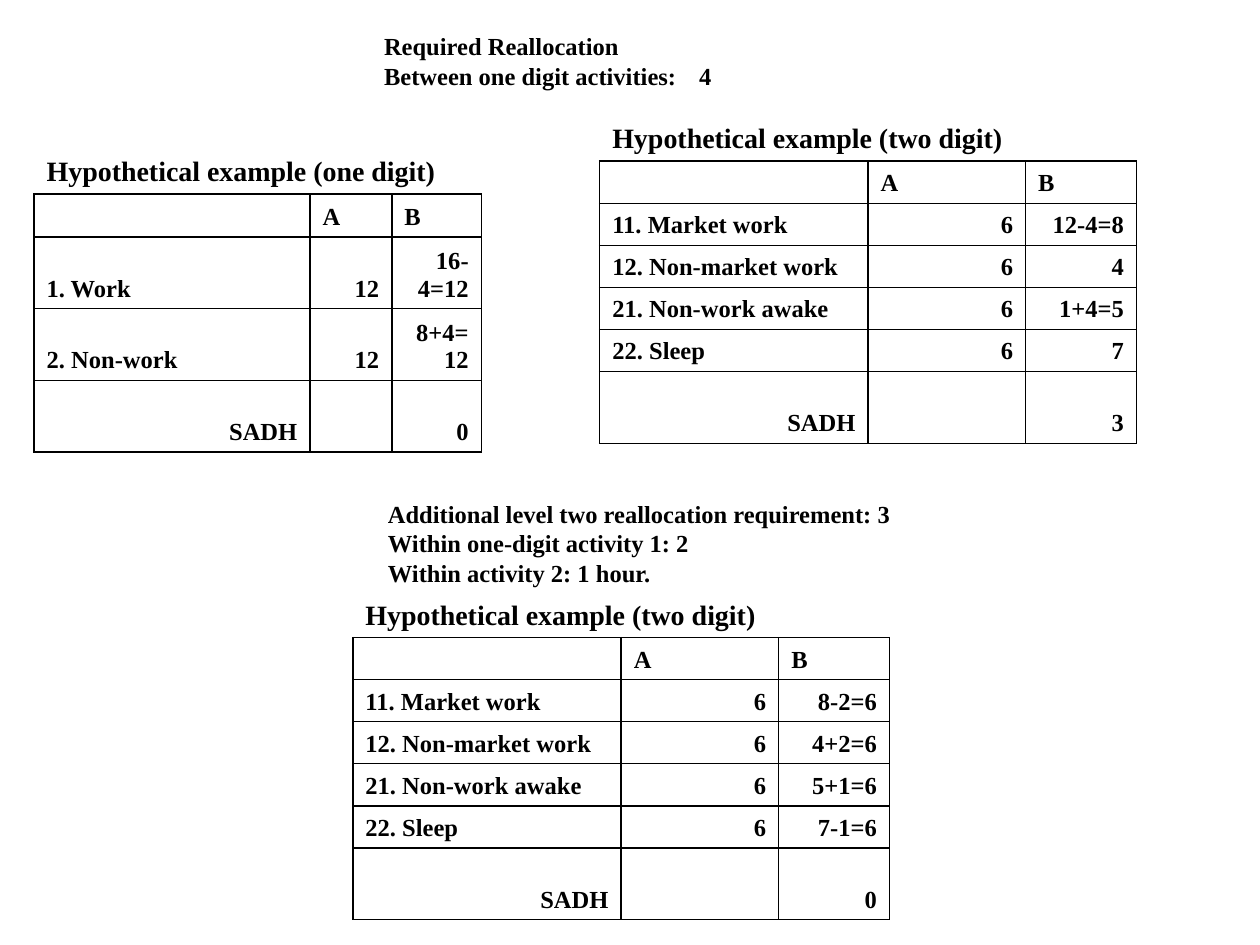
from lxml import etree
from pptx import Presentation
from pptx.dml.color import RGBColor
from pptx.enum.text import MSO_ANCHOR as ANCHOR, PP_ALIGN as ALIGN
from pptx.oxml.ns import qn
from pptx.util import Inches, Pt

COLORS = {"ink": "000000"}


class ReallocationSlide:
    """Holds the text style and the slide that receives the elements."""

    def __init__(self, s, font="Times New Roman", size=14):
        self.s, self.font, self.size = s, font, size

    def style(self, p, size):
        for r in p.runs:
            r.font.name, r.font.size, r.font.bold = self.font, Pt(size), True
            r.font.color.rgb = RGBColor.from_string(COLORS["ink"])
        if not p.runs:
            p._p.get_or_add_endParaRPr().set("sz", str(size * 100))

    def text(self, lines, x, y, w, h, indent=0.0, tab=None):
        tf = self.s.shapes.add_textbox(*map(Inches, (x, y, w, h))).text_frame
        tf.text = "\n".join(lines)
        tf.word_wrap, tf.margin_right = True, 0
        for p in tf.paragraphs:
            self.style(p, self.size)
            pPr = p._p.get_or_add_pPr()
            pPr.set("indent", str(Inches(indent)))
            if tab:
                tabs = etree.SubElement(pPr, qn("a:tabLst"))
                etree.SubElement(tabs, qn("a:tab"), pos=str(Inches(tab)), algn="l")

    def border(self, cell, sides):
        tcPr = cell._tc.get_or_add_tcPr()
        for side in "LRTB":
            ln = etree.SubElement(tcPr, qn(f"a:ln{side}"), w=str(Pt(1)))
            if side in sides:
                fill = etree.SubElement(ln, qn("a:solidFill"))
                etree.SubElement(fill, qn("a:srgbClr"), val=COLORS["ink"])
            else:
                etree.SubElement(ln, qn("a:noFill"))

    def cell(self, cell, text, size, align, sides="LRTB"):
        cell.text = text
        cell.vertical_anchor = ANCHOR.BOTTOM
        p = cell.text_frame.paragraphs[0]
        p.alignment = align
        self.style(p, size)
        self.border(cell, sides)
        cell.fill.background()

    def table(self, title, rows, x, y, widths, heights):
        grid = [(title, "", ""), ("", "A", "B"), *rows]
        frame = self.s.shapes.add_table(
            len(grid), len(widths), Inches(x), Inches(y),
            Inches(sum(widths)), Inches(sum(heights)))
        t = frame.table
        t.first_row = t.horz_banding = False
        for col, w in zip(t.columns, widths):
            col.width = Inches(w)
        for row, h in zip(t.rows, heights):
            row.height = Inches(h)
        t.cell(0, 0).merge(t.cell(0, len(widths) - 1))
        for i, values in enumerate(grid):
            for j, value in enumerate(values):
                right = i > 1 and (j > 0 or value == "SADH")
                self.cell(t.cell(i, j), value, 16 if i == 0 else self.size,
                          ALIGN.RIGHT if right else ALIGN.LEFT,
                          "B" if i == 0 else "LRTB")

    def two_digit_table(self, b_values, sadh, x, y):
        names = ("11. Market work", "12. Non-market work",
                 "21. Non-work awake", "22. Sleep")
        rows = [(name, "6", b) for name, b in zip(names, b_values)]
        self.table("Hypothetical example (two digit)", [*rows, ("SADH", "", sadh)],
                   x, y, (2.13, 1.25, 0.88), (0.37, *[0.33] * 5, 0.57))


def main():
    prs = Presentation()
    prs.slide_width, prs.slide_height = Inches(10), Inches(7.5)
    slide = ReallocationSlide(prs.slides.add_slide(prs.slide_layouts[6]))

    slide.text(["Required Reallocation", "Between one digit activities:\t4"],
               2.95, 0.2, 2.84, 0.57, tab=2.51)
    slide.table("Hypothetical example (one digit)",
                [("1. Work", "12", "16-4=12"),
                 ("2. Non-work", "12", "8+4=12"),
                 ("SADH", "", "0")],
                0.27, 0.91, (2.19, 0.65, 0.71), (0.63, 0.34, 0.57, 0.57, 0.57))
    slide.two_digit_table(("12-4=8", "4", "1+4=5", "7"), "3", 4.76, 0.91)
    slide.text(["Additional level two reallocation requirement: 3",
                "Within one-digit activity 1: 2",
                "Within activity 2: 1 hour."],
               2.48, 3.91, 4.69, 1.03, indent=0.5)
    slide.two_digit_table(("8-2=6", "4+2=6", "5+1=6", "7-1=6"), "0", 2.8, 4.69)

    prs.save("out.pptx")


if __name__ == "__main__":
    main()
